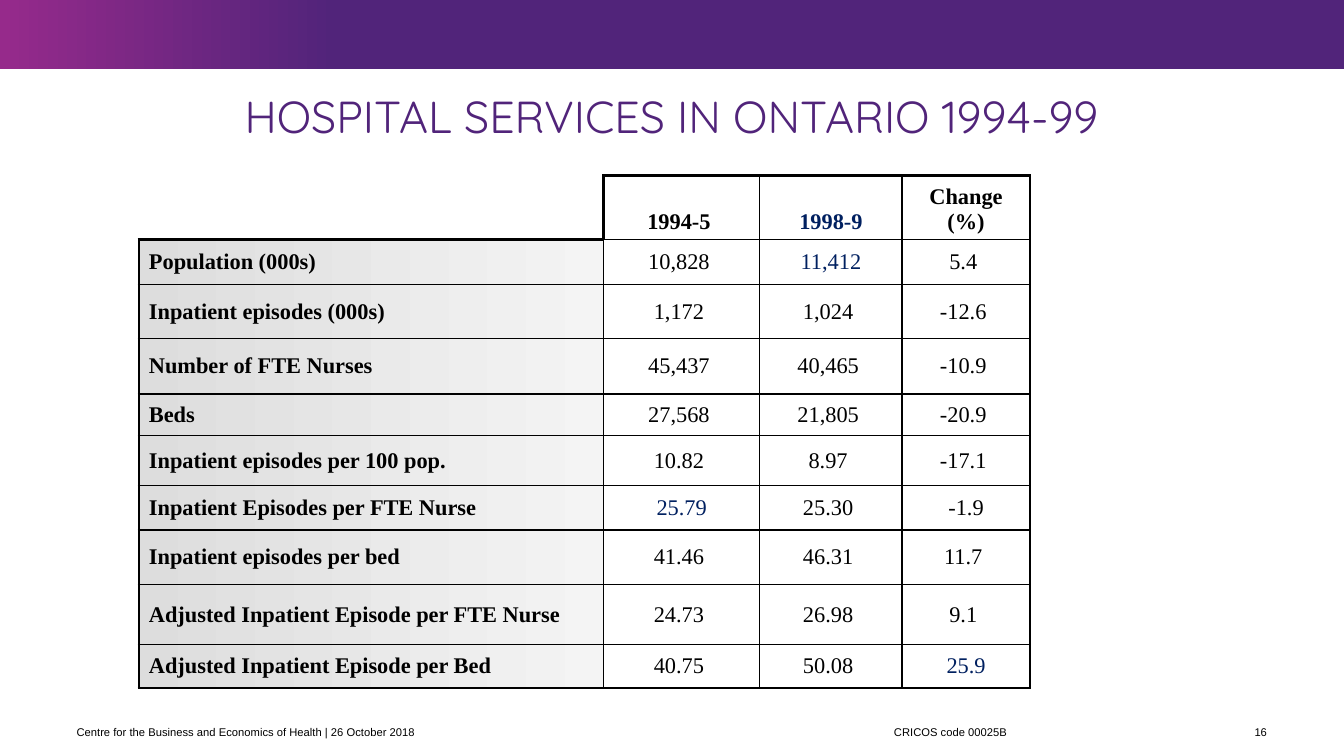
import pptx
import pptx.dml.color
import pptx.enum.shapes
import pptx.enum.text
import pptx.oxml
import pptx.oxml.ns
import pptx.util

Cm = pptx.util.Cm
Pt = pptx.util.Pt
RGBColor = pptx.dml.color.RGBColor
Align = pptx.enum.text.PP_ALIGN
Anchor = pptx.enum.text.MSO_ANCHOR

PURPLE = RGBColor(0x51, 0x24, 0x7A)
PLUM = RGBColor(0x96, 0x2A, 0x8B)
NAVY = RGBColor(0x00, 0x20, 0x60)
BLACK = RGBColor(0x00, 0x00, 0x00)
WHITE = RGBColor(0xFF, 0xFF, 0xFF)
GREY = RGBColor(0xDD, 0xDD, 0xDD)
PALE = RGBColor(0xF4, 0xF4, 0xF4)

THIN, THICK = 1, 2.25
WIDTHS = [11.71, 3.94, 3.58, 3.23]
HEIGHTS = [1.27, 1.14, 1.35, 1.4, 1.04, 1.27, 1.12, 1.37, 1.52, 1.09]
# The space after a figure shifts it slightly left of centre.
ROWS = [
    ["", "1994-5 ", "1998-9", "Change\n(%)"],
    ["Population (000s)", "10,828 ", "11,412", "5.4 "],
    ["Inpatient episodes (000s)", "1,172 ", "1,024 ", "-12.6 "],
    ["Number of FTE Nurses", "45,437 ", "40,465 ", "-10.9 "],
    ["Beds", "27,568 ", "21,805 ", "-20.9 "],
    ["Inpatient episodes per 100 pop.", "10.82 ", "8.97 ", "-17.1 "],
    ["Inpatient Episodes per FTE Nurse", "25.79", "25.30 ", "-1.9"],
    ["Inpatient episodes per bed", "41.46 ", "46.31 ", "11.7 "],
    ["Adjusted Inpatient Episode per FTE Nurse", "24.73 ", "26.98 ", "9.1 "],
    ["Adjusted Inpatient Episode per Bed", "40.75 ", "50.08 ", "25.9"],
]
NAVY_CELLS = {(0, 2), (1, 2), (6, 1), (9, 3)}

TITLE = {"name": "Quicksand", "size": Pt(32)}
FOOT = {"name": "Arial", "size": Pt(8)}
BODY = {"name": "Times New Roman", "size": Pt(16)}


def apply(item, format):
    for key, value in format.items():
        setattr(item, key, value)


def write(frame, text, font, color, align, space=None):
    """Fill a text frame, one paragraph per line of text."""
    frame.text = text
    for para in frame.paragraphs:
        apply(para, {"alignment": align, "line_spacing": space})
        for run in para.runs:
            apply(run.font, font)
            run.font.color.rgb = color


def blend(fill, stops):
    """Set a left to right gradient from (place, colour) pairs."""
    fill.gradient()
    fill.gradient_angle = 0
    for stop, (place, color) in zip(fill.gradient_stops, stops):
        stop.position = place
        stop.color.rgb = color


def add_band(slide):
    band = slide.shapes.add_shape(
        pptx.enum.shapes.MSO_SHAPE.RECTANGLE, 0, 0, Cm(33.87), Cm(1.75))
    band.shadow.inherit = False
    band.line.fill.background()
    blend(band.fill, [(0, PLUM), (0.25, PURPLE)])


def add_label(slide, text, place, font, color=BLACK, align=Align.LEFT,
              space=None):
    box = slide.shapes.add_textbox(*map(Cm, place))
    frame = box.text_frame
    apply(frame, {"word_wrap": True, "vertical_anchor": Anchor.MIDDLE,
                  "margin_left": 0, "margin_right": 0,
                  "margin_top": 0, "margin_bottom": 0})
    write(frame, text, font, color, align, space)


def add_edge(cell, side, weight):
    """Draw one cell border; a weight of 0 leaves it off."""
    paint = (f'<a:solidFill><a:srgbClr val="{BLACK}"/></a:solidFill>'
             if weight else "<a:noFill/>")
    cell._tc.get_or_add_tcPr().append(pptx.oxml.parse_xml(
        f'<a:ln{side} {pptx.oxml.ns.nsdecls("a")} w="{Pt(weight)}">'
        f"{paint}</a:ln{side}>"))


def frame_cell(cell, row, col):
    """Thick lines follow the stepped outline round the empty corner."""
    corner = (row, col) == (0, 0)
    thick = {
        "L": col == 0 or (row, col) == (0, 1),
        "R": col == len(WIDTHS) - 1 or corner,
        "T": row == 0 or (row, col) == (1, 0),
        "B": row == len(ROWS) - 1 or corner,
    }
    for side, heavy in thick.items():
        blank = corner and side in "LT"
        add_edge(cell, side, 0 if blank else THICK if heavy else THIN)


def fill_cell(cell, row, col):
    if col:
        cell.fill.solid()
        cell.fill.fore_color.rgb = WHITE
    elif row:
        blend(cell.fill, [(0, GREY), (1, PALE)])
    else:
        cell.fill.background()


def add_grid(slide):
    grid = slide.shapes.add_table(
        len(ROWS), len(WIDTHS), Cm(3.5), Cm(4.43),
        Cm(sum(WIDTHS)), Cm(sum(HEIGHTS))).table
    apply(grid, {"first_row": False, "horz_banding": False})
    for column, width in zip(grid.columns, WIDTHS):
        column.width = Cm(width)
    for line, height in zip(grid.rows, HEIGHTS):
        line.height = Cm(height)
    for row, texts in enumerate(ROWS):
        for col, text in enumerate(texts):
            cell = grid.cell(row, col)
            cell.vertical_anchor = Anchor.MIDDLE if row else Anchor.BOTTOM
            font = {**BODY, "bold": row == 0 or col == 0}
            color = NAVY if (row, col) in NAVY_CELLS else BLACK
            align = Align.CENTER if col else Align.LEFT
            write(cell.text_frame, text, font, color, align)
            frame_cell(cell, row, col)
            fill_cell(cell, row, col)


def main():
    deck = pptx.Presentation()
    apply(deck, {"slide_width": Cm(33.87), "slide_height": Cm(19.05)})
    slide = deck.slides.add_slide(deck.slide_layouts[6])
    add_band(slide)
    add_label(slide, "HOSPITAL SERVICES IN ONTARIO 1994-99",
              (1.93, 2.34, 30, 1.3), TITLE, PURPLE, Align.CENTER, 0.9)
    add_grid(slide)
    add_label(slide, "CRICOS code 00025B", (22.53, 18.11, 6.6, 0.66), FOOT)
    add_label(
        slide,
        "Centre for the Business and Economics of Health | 26 October 2018",
        (1.93, 18.11, 9.32, 0.66), FOOT)
    add_label(slide, "16", (31.14, 18.11, 0.79, 0.66), FOOT,
              align=Align.RIGHT)
    deck.save("out.pptx")


if __name__ == "__main__":
    main()
